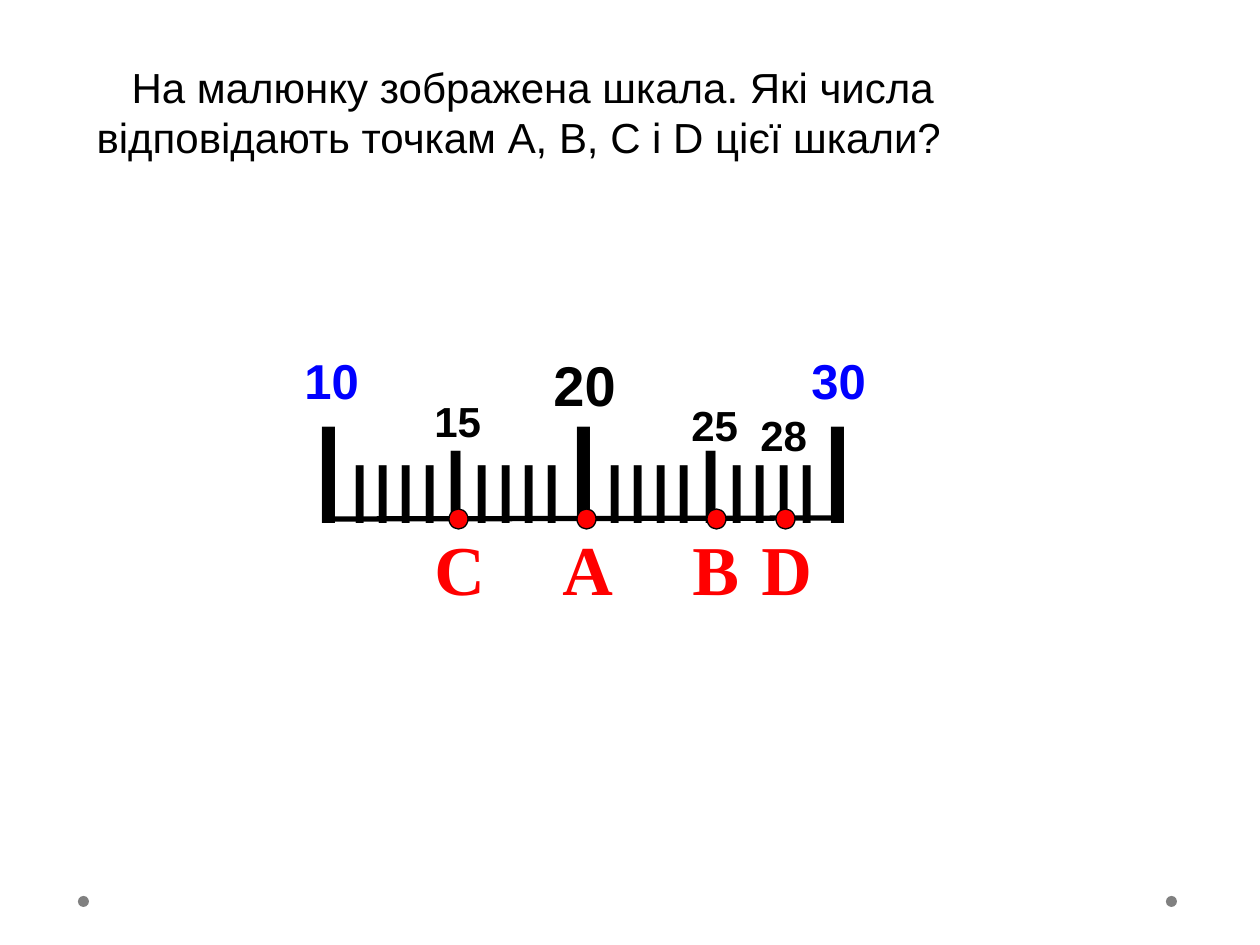
from pptx import Presentation
from pptx.dml.color import RGBColor
from pptx.enum.shapes import MSO_CONNECTOR, MSO_SHAPE
from pptx.enum.text import MSO_ANCHOR, MSO_AUTO_SIZE, PP_ALIGN
from pptx.oxml.ns import qn
from pptx.util import Emu, Pt
from lxml import etree

LEFT, TOP = PP_ALIGN.LEFT, MSO_ANCHOR.TOP
NO_FIT, GROW = MSO_AUTO_SIZE.NONE, MSO_AUTO_SIZE.SHAPE_TO_FIT_TEXT
OVAL, POINT = MSO_SHAPE.OVAL, MSO_SHAPE.FLOWCHART_CONNECTOR
STRAIGHT = MSO_CONNECTOR.STRAIGHT

BLACK = RGBColor(0x00, 0x00, 0x00)
BLUE = RGBColor(0x00, 0x00, 0xFF)
RED = RGBColor(0xFF, 0x00, 0x00)
GRAY = RGBColor(0x80, 0x80, 0x80)

SANS, SERIF = "Arial", "Times New Roman"
PX_PER_INCH = 126


def px(length):
    """Turn a length in px into EMU."""
    return Emu(round(length * 914400 / PX_PER_INCH))


def format_run(run, size, color=BLACK, font=SANS, bold=False):
    """Format one run of text."""
    run.font.size = Pt(size)
    run.font.name = font
    run.font.bold = bold
    run.font.color.rgb = color


def add_text(shapes, box, runs, **style):
    """Add an unwrapped text box from (text, size) pairs."""
    text_box = shapes.add_textbox(*map(px, box))
    frame = text_box.text_frame
    frame.word_wrap = False
    frame.auto_size = GROW
    paragraph = frame.paragraphs[0]
    for text, size in runs:
        run = paragraph.add_run()
        run.text = text
        format_run(run, size, **style)


def add_dot(shapes, kind, box, fill, line=None):
    """Add a round filled shape, outlined when a line colour is given."""
    dot = shapes.add_shape(kind, *map(px, box))
    dot.shadow.inherit = False
    dot.fill.solid()
    dot.fill.fore_color.rgb = fill
    if line is None:
        dot.line.fill.background()
    else:
        dot.line.color.rgb = line
        dot.line.width = Pt(0.75)


def add_question(slide, box):
    """Fill the title placeholder with the question."""
    title = slide.shapes.title
    title.left, title.top, title.width, title.height = map(px, box)
    frame = title.text_frame
    frame.word_wrap = True
    frame.auto_size = NO_FIT
    frame.vertical_anchor = TOP
    paragraph = frame.paragraphs[0]
    paragraph.alignment = LEFT
    paragraph._p.get_or_add_pPr().set("indent", str(px(35)))
    run = paragraph.add_run()
    run.text = ("На малюнку зображена шкала. Які числа "
                "відповідають точкам А, В, С і D цієї шкали?")
    format_run(run, 24)


def add_axis(slide, start, end):
    """Draw the base line of the scale."""
    axis = slide.shapes.add_connector(STRAIGHT, *map(px, start + end))
    axis.line.color.rgb = BLACK
    axis.line.width = Pt(3)
    etree.SubElement(axis._element.spPr, qn("a:effectLst"))


def add_point(slide, left, top, name):
    """Add a grouped point of the scale with its letter below."""
    shapes = slide.shapes.add_group_shape().shapes
    add_dot(shapes, POINT, (left, top, 19, 20), RED, BLACK)
    add_text(shapes, (left - 27, top + 10, 76, 97), [(name, 40)],
             color=RED, font=SERIF, bold=True)


def add_scale(slide, left, top):
    """Draw the ticks, numbers and points of the scale."""
    shapes = slide.shapes
    small = ("IIII", 48)
    ticks = [("I", 80)] + [small, ("I", 60), small, ("I", 80)] * 2
    add_text(shapes, (left + 5, top + 33, 574, 180), ticks)
    add_axis(slide, (left + 31, top + 175), (left + 551, top + 174))
    numbers = [
        ("10", 0, 0, 28, BLUE),
        ("20", 249, 0, 32, BLACK),
        ("30", 507, 0, 28, BLUE),
        ("15", 130, 45, 24, BLACK),
        ("25", 387, 49, 24, BLACK),
        ("28", 456, 59, 24, BLACK),
    ]
    for text, x, y, size, color in numbers:
        box = (left + x, top + y, 12 + 5 * size // 2, 16 + 2 * size)
        add_text(shapes, box, [(text, size)], color=color, bold=True)
    for name, x in (("C", 157), ("B", 415), ("A", 285), ("D", 484)):
        add_point(slide, left + x, top + 165, name)


def add_corner_dots(slide, top):
    """Add the two gray dots at the foot of the slide."""
    for left in (1166, 78):
        add_dot(slide.shapes, OVAL, (left, top, 11, 11), GRAY)


def main():
    """Build and save the slide."""
    presentation = Presentation()
    presentation.slide_width = px(1260)
    presentation.slide_height = px(945)
    slide = presentation.slides.add_slide(presentation.slide_layouts[5])
    add_corner_dots(slide, 896)
    add_question(slide, (84, 55, 1121, 113))
    add_scale(slide, 292, 344)
    presentation.save("out.pptx")


if __name__ == "__main__":
    main()
